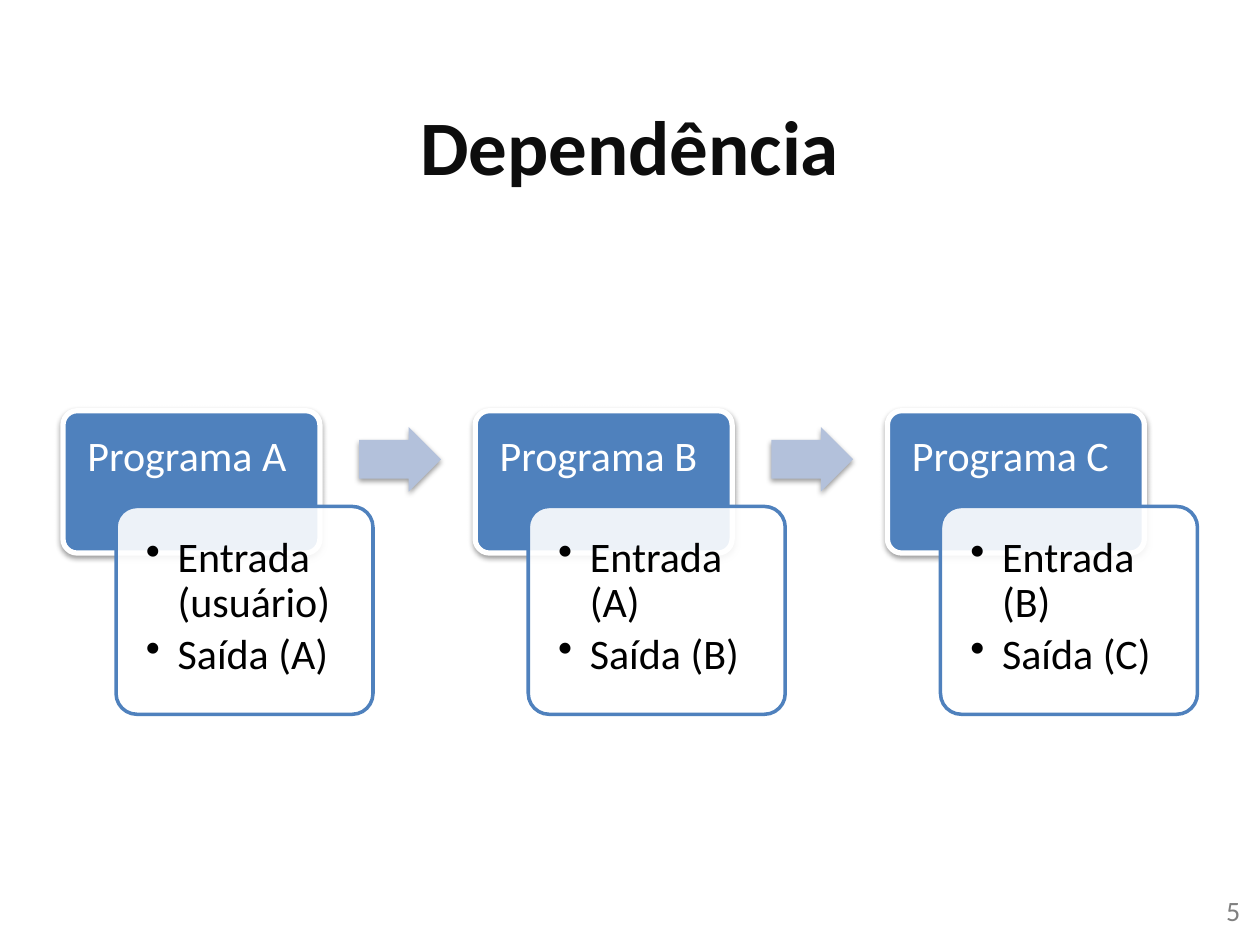
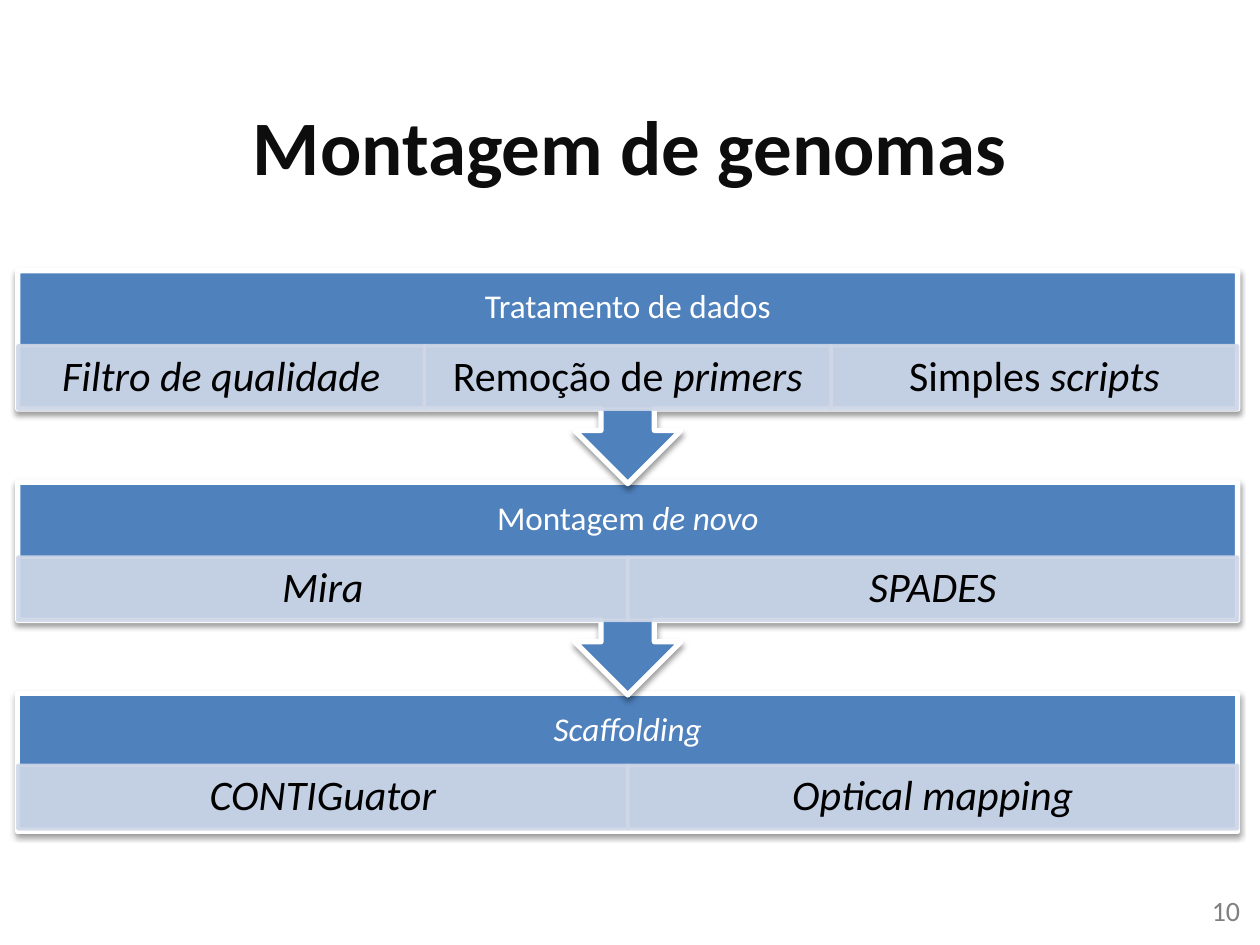
from lxml import etree
from pptx import Presentation
from pptx import util as u
from pptx.dml.color import RGBColor
from pptx.enum import shapes, text
from pptx.oxml.ns import qn

COLORS = {
    "title": "0D0D0D",
    "number": "808080",
    "blue": "4F81BD",
    "arrow": "B3C1DB",
    "step": "D0D8E8",
    "white": "FFFFFF",
    "black": "000000",
}
FONT = "Calibri"
SHAPE = shapes.MSO_SHAPE
ALIGN = text.PP_ALIGN
ANCHOR = text.MSO_ANCHOR


def add_child(parent, tag, **attributes):
    child = etree.SubElement(parent, qn(tag))
    for name, value in attributes.items():
        child.set(name, str(value))
    return child


class Deck:
    def __init__(self):
        self.presentation = Presentation()
        self.presentation.slide_width = u.Cm(25.4)
        self.presentation.slide_height = u.Cm(19.05)
        self.slide = None

    def add_slide(self, title, number):
        self.slide = self.presentation.slides.add_slide(self.presentation.slide_layouts[6])
        self.label(1.27, 1.32, 22.86, 3.18, title, 44, "title", ALIGN.CENTER, ANCHOR.MIDDLE, bold=True)
        self.label(19.33, 17.88, 5.92, 1.02, number, 16, "number", ALIGN.RIGHT, ANCHOR.TOP)

    def label(self, left, top, width, height, content, size, color, align, anchor, bold=False):
        box = self.slide.shapes.add_textbox(u.Cm(left), u.Cm(top), u.Cm(width), u.Cm(height))
        frame = box.text_frame
        frame.word_wrap = True
        frame.vertical_anchor = anchor
        frame.text = content
        paragraph = frame.paragraphs[0]
        paragraph.alignment = align
        self.style_font(paragraph.runs[0].font, size, color)
        paragraph.runs[0].font.bold = bold

    def style_font(self, font, size, color):
        font.name = FONT
        font.size = u.Pt(size)
        font.color.rgb = RGBColor.from_string(COLORS[color])

    def shape(self, kind, left, top, width, height, fill, line=None, weight=0, adjust=()):
        shape = self.slide.shapes.add_shape(kind, u.Cm(left), u.Cm(top), u.Cm(width), u.Cm(height))
        shape.shadow.inherit = False
        for index, value in enumerate(adjust):
            shape.adjustments[index] = value
        shape.fill.solid()
        shape.fill.fore_color.rgb = RGBColor.from_string(COLORS[fill])
        if line:
            shape.line.color.rgb = RGBColor.from_string(COLORS[line])
            shape.line.width = u.Pt(weight)
        else:
            shape.line.fill.background()
        return shape

    def drop_shadow(self, shape):
        effects = shape.element.spPr.find(qn("a:effectLst"))
        outer = add_child(effects, "a:outerShdw", blurRad=u.Pt(3.1), dist=u.Pt(1.6), dir=5400000, rotWithShape=0)
        color = add_child(outer, "a:srgbClr", val=COLORS["black"])
        add_child(color, "a:alpha", val=38000)

    def translucent(self, shape, *parts):
        for part in parts:
            for color in shape.element.spPr.xpath(part + "/a:srgbClr"):
                add_child(color, "a:alpha", val=90000)

    def fill_text(self, shape, lines, size, color, align, anchor, insets, after=0, bullets=False):
        frame = shape.text_frame
        frame.word_wrap = True
        frame.vertical_anchor = anchor
        frame.margin_left, frame.margin_top, frame.margin_right, frame.margin_bottom = map(u.Cm, insets)
        for index, line in enumerate(lines):
            paragraph = frame.add_paragraph() if index else frame.paragraphs[0]
            paragraph.alignment = align
            paragraph.line_spacing = 0.9
            paragraph.space_after = u.Pt(after)
            if bullets:
                properties = paragraph._p.get_or_add_pPr()
                properties.set("marL", str(u.Cm(0.64)))
                properties.set("indent", str(u.Cm(-0.64)))
                add_child(properties, "a:buChar", char="•")
            for part, words in enumerate(line.split("*")):
                if words:
                    run = paragraph.add_run()
                    run.text = words
                    self.style_font(run.font, size, color)
                    run.font.italic = part % 2 == 1

    def program(self, left, name, details):
        card = self.shape(SHAPE.ROUNDED_RECTANGLE, left, 8.28, 5.18, 2.87, "blue", "white", 3, [0.1])
        self.drop_shadow(card)
        self.fill_text(card, [name], 24, "white", ALIGN.LEFT, ANCHOR.TOP, (0.41, 0.41, 0.41, 0.25))
        box = self.shape(SHAPE.ROUNDED_RECTANGLE, left + 1.07, 10.21, 5.18, 4.19, "white", "blue", 2, [0.1])
        self.translucent(box, "a:solidFill")
        self.fill_text(box, details, 24, "black", ALIGN.LEFT, ANCHOR.TOP, [0.48] * 4, 3.6, bullets=True)

    def flow_arrow(self, left):
        arrow = self.shape(SHAPE.RIGHT_ARROW, left, 8.61, 1.65, 1.3, "arrow", adjust=[0.6, 0.5])
        self.drop_shadow(arrow)

    def stage(self, top, kind, height, step_offset, heading, steps):
        left, width, step_height = 0.36, 24.59, 1.28
        band = self.shape(kind, left, top, width, height, "blue", "white", 3)
        self.drop_shadow(band)
        self.fill_text(band, [heading], 19, "white", ALIGN.CENTER, ANCHOR.MIDDLE, (0.38, 0, 0.38, step_height))
        step_width = width / len(steps)
        for index, step in enumerate(steps):
            cell = self.shape(SHAPE.RECTANGLE, left + index * step_width, top + step_offset,
                              step_width, step_height, "step", "step", 2)
            self.translucent(cell, "a:solidFill", "a:ln/a:solidFill")
            self.fill_text(cell, [step], 24, "black", ALIGN.CENTER, ANCHOR.MIDDLE, (0.48, 0.08, 0.48, 0.08))


def build_dependency(deck):
    deck.add_slide("Dependência", "5")
    programs = [("A", "usuário"), ("B", "A"), ("C", "B")]
    for index, (name, source) in enumerate(programs):
        left = 1.27 + index * 8.31
        deck.program(left, f"Programa {name}", [f"Entrada ({source})", f"Saída ({name})"])
        if index < len(programs) - 1:
            deck.flow_arrow(left + 5.97)


def build_assembly(deck):
    deck.add_slide("Montagem de genomas", "10")
    callout = (SHAPE.DOWN_ARROW_CALLOUT, 4.29, 1.51)
    final = (SHAPE.RECTANGLE, 2.79, 1.45)
    stages = [
        (callout, "Tratamento de dados", ["*Filtro de qualidade*", "Remoção de *primers*", "Simples *scripts*"]),
        (callout, "Montagem *de novo*", ["*Mira*", "*SPADES*"]),
        (final, "*Scaffolding*", ["*CONTIGuator*", "*Optical mapping*"]),
    ]
    for index, (form, heading, steps) in reversed(list(enumerate(stages))):
        deck.stage(5.46 + index * 4.26, *form, heading, steps)


def main():
    deck = Deck()
    build_dependency(deck)
    build_assembly(deck)
    deck.presentation.save("out.pptx")


if __name__ == "__main__":
    main()
